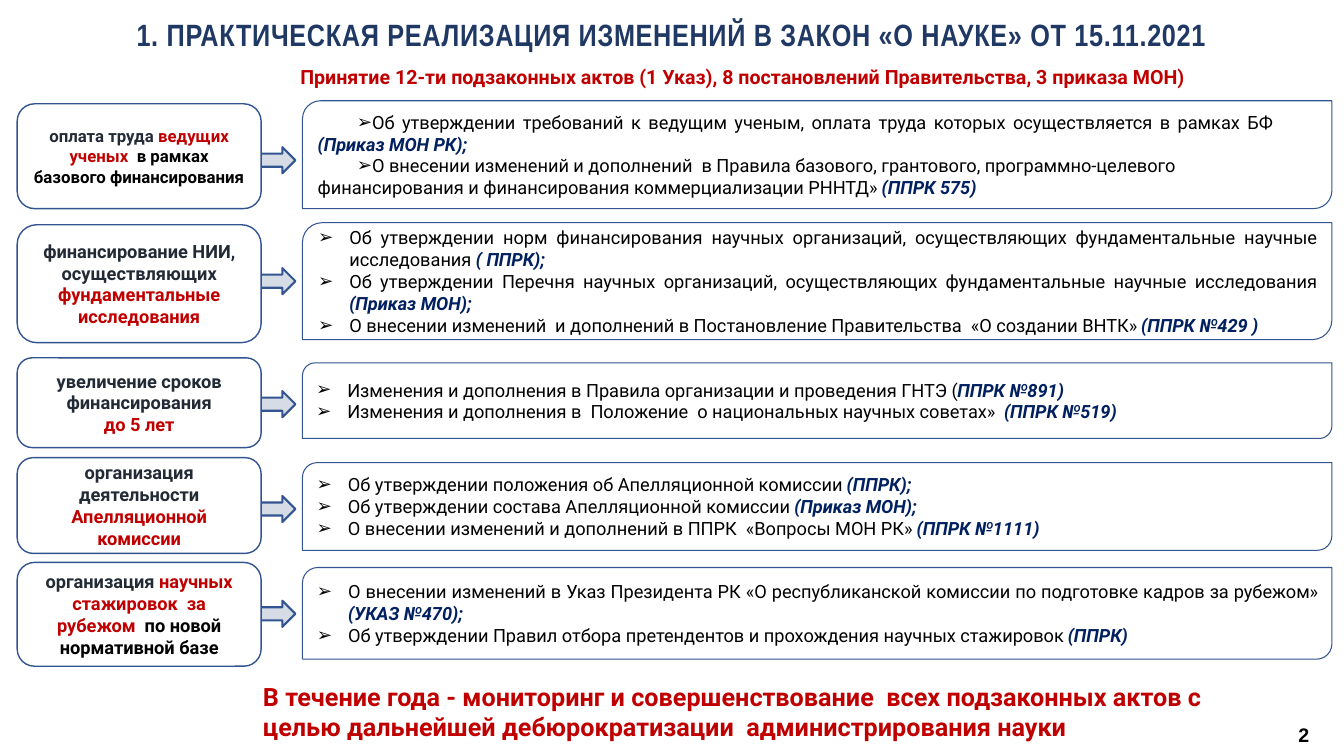
from pptx import Presentation
from pptx.dml.color import RGBColor
from pptx.enum.shapes import MSO_SHAPE as Preset
from pptx.enum.text import MSO_ANCHOR as Anchor, MSO_AUTO_SIZE as AutoSize, PP_ALIGN as Align
from pptx.oxml.ns import qn
from pptx.util import Inches, Pt
from lxml.etree import SubElement

WHITE = RGBColor(0xFF, 0xFF, 0xFF)
BLACK = RGBColor(0x00, 0x00, 0x00)
SLATE = RGBColor(0x22, 0x2A, 0x35)
RED = RGBColor(0xC0, 0x00, 0x00)
NAVY = RGBColor(0x00, 0x20, 0x60)
TITLE_BLUE = RGBColor(0x20, 0x38, 0x64)
OUTLINE = RGBColor(0x32, 0x54, 0x91)
ARROW_FILL = RGBColor(0xD6, 0xDC, 0xE5)

HANGING = (0.31, -0.31)
FIRST_LINE = (0, 0.39)


def add_span(para, text, size=13, color=BLACK, bold=False, italic=False,
             font="Roboto", spacing=None):
    span = para.add_run()
    span.text = text
    span.font.name = font
    span.font.size = Pt(size)
    span.font.color.rgb = color
    span.font.bold = bold
    span.font.italic = italic
    if spacing:
        span.font._element.set("spc", str(int(spacing * 100)))


def add_bullet(para, indent):
    properties = para._p.get_or_add_pPr()
    margin, first = indent
    properties.set("marL", str(Inches(margin)))
    properties.set("indent", str(Inches(first)))
    SubElement(properties, qn("a:buFont")).set("typeface", "Arial")
    SubElement(properties, qn("a:buChar")).set("char", "➢")


class Page:
    def __init__(self, deck):
        self.slide = deck.slides.add_slide(deck.slide_layouts[5])

    def title(self, text, area):
        box = self.slide.shapes.title
        box.left, box.top, box.width, box.height = map(Inches, area)
        frame = box.text_frame
        frame.auto_size = AutoSize.NONE
        frame.vertical_anchor = Anchor.TOP
        para = frame.paragraphs[0]
        para.alignment = Align.CENTER
        add_span(para, text, size=22, color=TITLE_BLUE, bold=True,
                 font="Arial Narrow", spacing=0.5)

    def text(self, text, area, wrap=True, **style):
        box = self.slide.shapes.add_textbox(*map(Inches, area))
        box.text_frame.word_wrap = wrap
        add_span(box.text_frame.paragraphs[0], text, bold=True, **style)

    def shape(self, preset, area, fill=WHITE, weight=1.0):
        shape = self.slide.shapes.add_shape(preset, *map(Inches, area))
        shape.shadow.inherit = False
        shape.fill.solid()
        shape.fill.fore_color.rgb = fill
        shape.line.color.rgb = OUTLINE
        shape.line.width = Pt(weight)
        return shape

    def arrow(self, top):
        self.shape(Preset.RIGHT_ARROW, (2.48, top, 0.45, 0.26), ARROW_FILL, 1.5)

    def label(self, paragraphs, top, height, size):
        frame = self.shape(Preset.ROUNDED_RECTANGLE, (0.17, top, 2.42, height)).text_frame
        frame.word_wrap = True
        frame.vertical_anchor = Anchor.MIDDLE
        for index, spans in enumerate(paragraphs):
            para = frame.add_paragraph() if index else frame.paragraphs[0]
            para.alignment = Align.CENTER
            for text, color in spans:
                add_span(para, text, size=size, color=color, bold=True)

    def acts(self, items, top, height, indent=HANGING, right=0.1):
        frame = self.shape(Preset.ROUND_2_DIAG_RECTANGLE,
                           (3, top, 10.21, height), weight=0.75).text_frame
        frame.word_wrap = True
        frame.vertical_anchor = Anchor.MIDDLE
        frame.margin_right = Inches(right)
        for index, (text, act, align) in enumerate(items):
            para = frame.add_paragraph() if index else frame.paragraphs[0]
            para.alignment = align
            add_bullet(para, indent)
            add_span(para, text)
            add_span(para, act, color=NAVY, bold=True, italic=True)


ROWS = [
    dict(
        arrow=1.46,
        label=dict(top=1.03, height=1.04, size=12, paragraphs=[
            [("оплата труда ", SLATE), ("ведущих ученых  ", RED),
             ("в рамках базового финансирования", BLACK)]]),
        acts=dict(top=1, height=1.07, indent=FIRST_LINE, right=0.54, items=[
            ("Об утверждении требований к ведущим ученым, оплата труда которых "
             "осуществляется в рамках БФ ", "(Приказ МОН РК);", Align.JUSTIFY),
            ("О внесении изменений и дополнений  в Правила базового, грантового, "
             "программно-целевого финансирования и финансирования коммерциализации РННТД» ",
             "(ППРК 575)", Align.LEFT)])),
    dict(
        arrow=2.66,
        label=dict(top=2.23, height=1.17, size=13, paragraphs=[
            [("финансирование НИИ, осуществляющих ", SLATE),
             ("фундаментальные исследования", RED)]]),
        acts=dict(top=2.21, height=1.16, items=[
            ("Об утверждении норм финансирования научных организаций, осуществляющих "
             "фундаментальные научные исследования ", "( ППРК);", Align.JUSTIFY),
            ("Об утверждении Перечня научных организаций, осуществляющих "
             "фундаментальные научные исследования ", "(Приказ МОН);", Align.JUSTIFY),
            ("О внесении изменений  и дополнений в Постановление Правительства  "
             "«О создании ВНТК» ", "(ППРК №429 )", Align.JUSTIFY)])),
    dict(
        arrow=3.88,
        label=dict(top=3.55, height=0.89, size=13, paragraphs=[
            [("увеличение сроков финансирования", SLATE)], [("до 5 лет", RED)]]),
        acts=dict(top=3.6, height=0.75, items=[
            ("Изменения и дополнения в Правила организации и проведения ГНТЭ (",
             "ППРК №891)", Align.JUSTIFY),
            ("Изменения и дополнения в  Положение  о национальных научных советах»  ",
             "(ППРК №519)", Align.JUSTIFY)])),
    dict(
        arrow=4.92,
        label=dict(top=4.54, height=0.95, size=13, paragraphs=[
            [("организация деятельности ", SLATE), ("Апелляционной комиссии", RED)]]),
        acts=dict(top=4.59, height=0.87, items=[
            ("Об утверждении положения об Апелляционной комиссии ", "(ППРК);", Align.LEFT),
            ("Об утверждении состава Апелляционной комиссии ", "(Приказ МОН);", Align.LEFT),
            ("О внесении изменений и дополнений в ППРК  «Вопросы МОН РК» ",
             "(ППРК №1111)", Align.JUSTIFY)])),
    dict(
        arrow=5.96,
        label=dict(top=5.58, height=1.03, size=13, paragraphs=[
            [("организация ", SLATE), ("научных стажировок  за рубежом  ", RED),
             ("по новой нормативной базе", BLACK)]]),
        acts=dict(top=5.63, height=0.91, items=[
            ("О внесении изменений в Указ Президента РК «О республиканской комиссии "
             "по подготовке кадров за рубежом» ", "(УКАЗ №470);", Align.JUSTIFY),
            ("Об утверждении Правил отбора претендентов и прохождения научных стажировок ",
             "(ППРК)", Align.JUSTIFY)])),
]


def main():
    deck = Presentation()
    deck.slide_width = Inches(13.33)
    deck.slide_height = Inches(7.5)
    page = Page(deck)
    page.title("1. ПРАКТИЧЕСКАЯ РЕАЛИЗАЦИЯ ИЗМЕНЕНИЙ В ЗАКОН «О НАУКЕ» ОТ 15.11.2021",
               (0, 0.11, 13.33, 0.47))
    page.text("Принятие 12-ти подзаконных актов (1 Указ), 8 постановлений Правительства, "
              "3 приказа МОН)", (2.88, 0.59, 10.4, 0.34), size=14, color=RED)
    for row in ROWS:
        page.arrow(row["arrow"])
        page.label(**row["label"])
        page.acts(**row["acts"])
    page.text("В течение года - мониторинг и совершенствование  всех подзаконных актов "
              "с целью дальнейшей дебюрократизации  администрирования науки",
              (2.51, 6.71, 10.2, 0.71), size=18, color=RED)
    page.text("2", (12.78, 7.12, 0.31, 0.34), wrap=False, size=14, font="Arial")
    deck.save("out.pptx")


if __name__ == "__main__":
    main()
